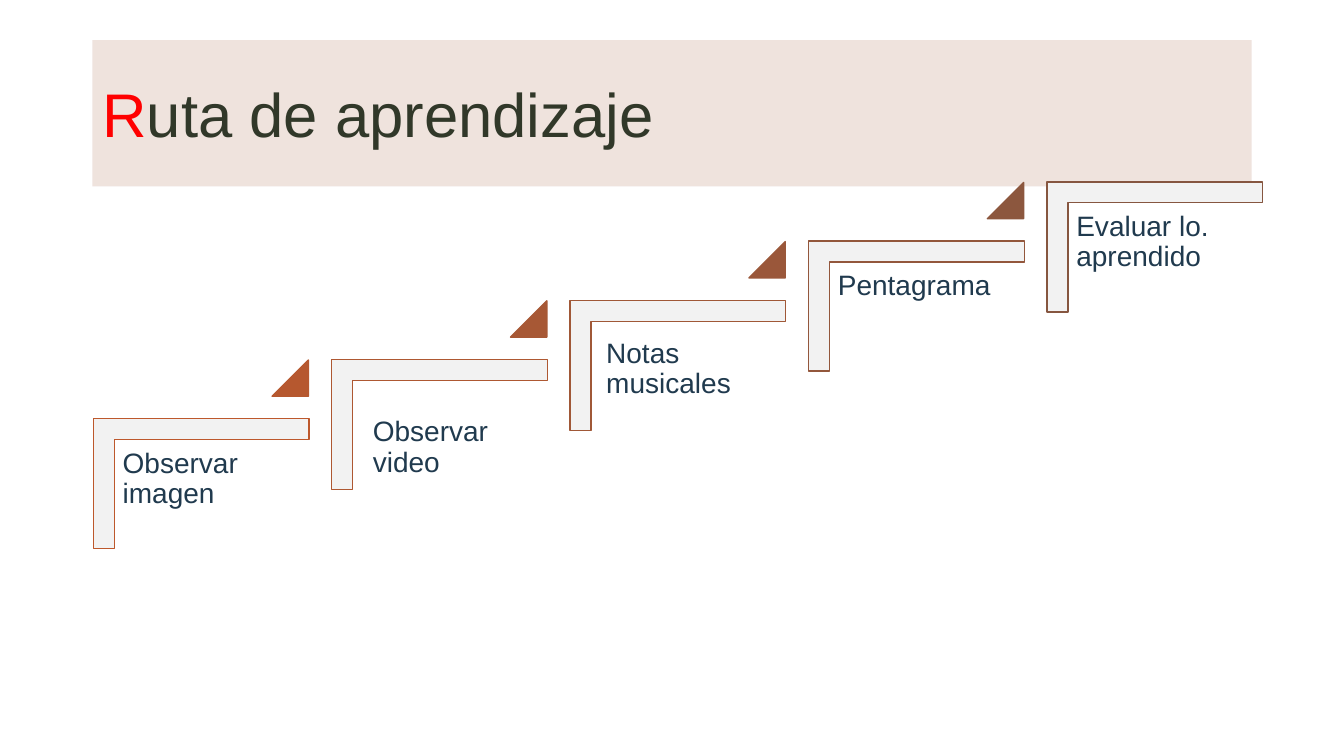
from lxml import etree
from pptx import Presentation
from pptx.dml.color import RGBColor
from pptx.enum import shapes, text
from pptx.oxml import ns
from pptx.util import Pt

TITLE = [("R", "initial"), ("uta de aprendizaje", "title")]
# Label, and its offset from the step bracket
STEPS = [
    ("Observar imagen", (-15.6, 46.1)),
    ("Observar video", (-7.2, 66.2)),
    ("Notas musicales", (-10.8, 52.6)),
    ("Pentagrama", (-15.6, 46.1)),
    ("Evaluar lo. aprendido", (-15.6, 46.1)),
]
COLORS = {
    "band": "EBDCD5", "initial": "FF0000", "title": "313829",
    "bracket": "F2F2F2", "label": "203A4E",
}
BRACKET_LINES = ["BD582C", "AE5832", "A05837", "93573C", "865640"]
TRIANGLES = ["B6582F", "A75835", "9A573A", "8C573E"]
FONT = "Arial"
START_X, START_Y = 97.2, 268.5
STEP_X, RISE = 170.3, 42.3
BRACKET_W, BRACKET_H = 92.9, 154.1
TRIANGLE_SIZE = 25.9


def rgb(value):
    return RGBColor.from_string(value)


def add_span(para, words, size, color):
    span = para.add_run()
    span.text = words
    span.font.name = FONT
    span.font.size = Pt(size)
    span.font.color.rgb = rgb(color)


def add_figure(page, kind, place, fill, line):
    figure = page.shapes.add_shape(kind, *map(Pt, place))
    figure.shadow.inherit = False
    figure.fill.solid()
    figure.fill.fore_color.rgb = rgb(fill)
    figure.line.color.rgb = rgb(line)
    figure.line.width = Pt(1)
    return figure


def add_label(page, words, left, top):
    box = page.shapes.add_textbox(Pt(left), Pt(top), Pt(139), Pt(121.7))
    frame = box.text_frame
    frame.word_wrap = True
    frame.margin_left = frame.margin_right = Pt(6)
    frame.margin_top = frame.margin_bottom = Pt(6)
    para = frame.paragraphs[0]
    para.line_spacing = 0.9
    add_span(para, words, 20, COLORS["label"])


def add_title(page):
    band = page.shapes.title
    band.left, band.top, band.width, band.height = map(Pt, (66, 28.75, 828, 104.4))
    band.fill.solid()
    band.fill.fore_color.rgb = rgb(COLORS["band"])
    # Band transparency
    tint = band.fill._xPr.find(".//" + ns.qn("a:srgbClr"))
    etree.SubElement(tint, ns.qn("a:alpha"), val="80000")
    frame = band.text_frame
    frame.auto_size = text.MSO_AUTO_SIZE.NONE
    frame.vertical_anchor = text.MSO_ANCHOR.MIDDLE
    para = frame.paragraphs[0]
    para.alignment = text.PP_ALIGN.LEFT
    for words, color in TITLE:
        add_span(para, words, 44, COLORS[color])


def add_staircase(page):
    for index, (words, (shift_x, shift_y)) in enumerate(STEPS):
        left = START_X + index * STEP_X
        top = START_Y - index * RISE
        # Step bracket
        bracket = add_figure(page, shapes.MSO_SHAPE.CORNER,
                             (left, top, BRACKET_W, BRACKET_H),
                             COLORS["bracket"], BRACKET_LINES[index])
        bracket.rotation = 90
        bracket.adjustments[0] = bracket.adjustments[1] = 0.161
        add_label(page, words, left + shift_x, top + shift_y)
        # Triangle leading to the next step
        if index < len(TRIANGLES):
            color = TRIANGLES[index]
            triangle = add_figure(page, shapes.MSO_SHAPE.ISOSCELES_TRIANGLE,
                                  (left + 97.2, top - 11.3, TRIANGLE_SIZE, TRIANGLE_SIZE),
                                  color, color)
            triangle.adjustments[0] = 1


def main():
    deck = Presentation()
    deck.slide_width, deck.slide_height = Pt(960), Pt(540)
    page = deck.slides.add_slide(deck.slide_layouts[5])
    add_title(page)
    add_staircase(page)
    deck.save("out.pptx")


if __name__ == "__main__":
    main()
